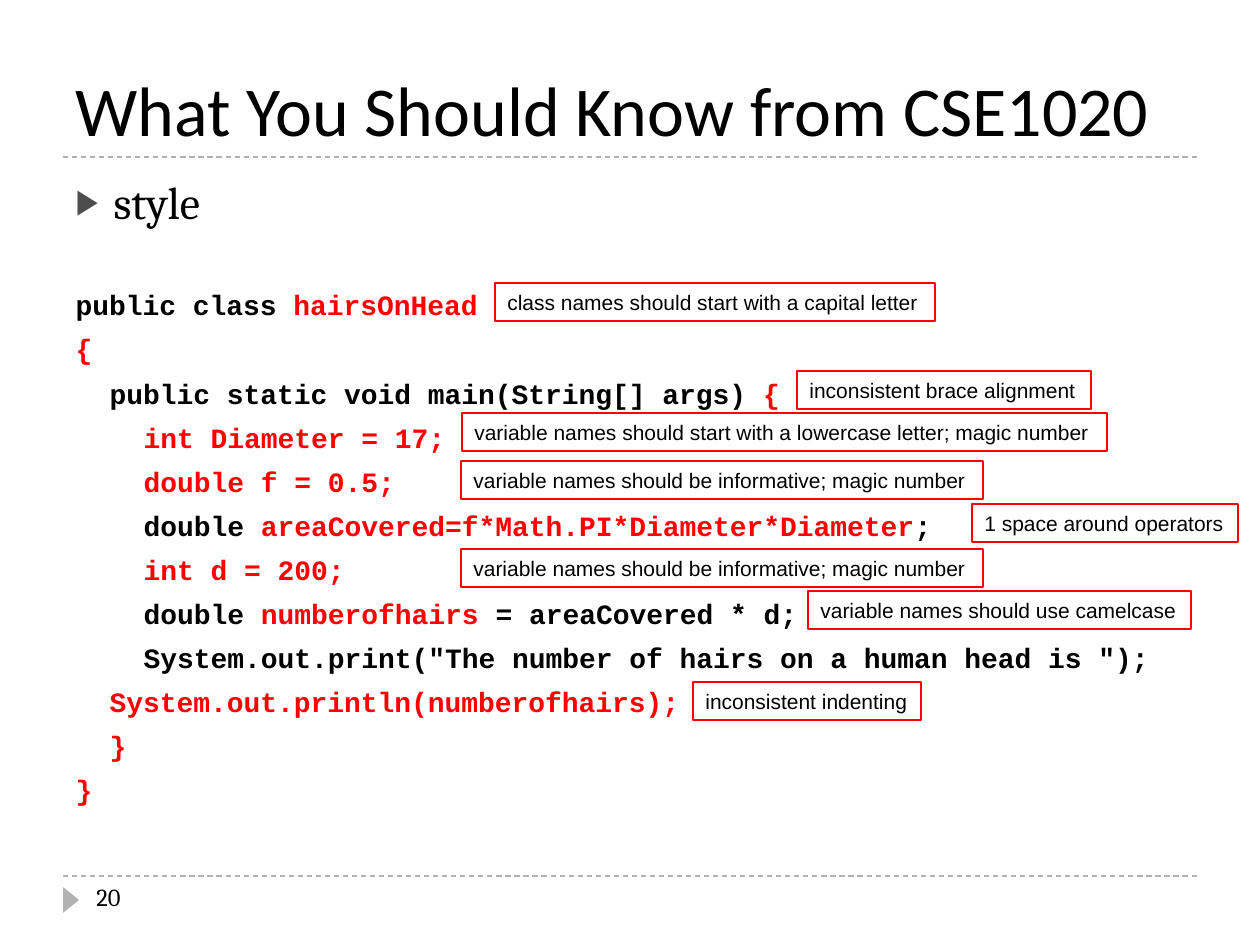
import pptx
import pptx.util
import pptx.dml.color
import pptx.enum.dml
import pptx.enum.shapes
import pptx.enum.text
import pptx.oxml
import pptx.oxml.ns

PX = 914400 / 126  # slide grid: 126 px to the inch
HUES = {"ink": "000000", "bad": "FF0000", "rule": "B2B2B2", "mark": "4D4D4D"}
FONTS = {
    "title": {"name": "Calibri", "size": pptx.util.Pt(40), "bold": False},
    "list": {"name": "Cambria", "size": pptx.util.Pt(26), "bold": False},
    "code": {"name": "Courier New", "size": pptx.util.Pt(16), "bold": True},
    "note": {"name": "Arial", "size": pptx.util.Pt(12), "bold": False},
    "page": {"name": "Cambria", "size": pptx.util.Pt(14), "bold": False},
}
STEP = 34  # two code characters

# Indent level and text; every second part between ~ marks is a style fault
CODE = [
    (0, "public class ~hairsOnHead"),
    (0, "~{"),
    (1, "public static void main(String[] args) ~{"),
    (2, "~int Diameter = 17;"),
    (2, "~double f = 0.5;"),
    (2, "double ~areaCovered=f*Math.PI*Diameter*Diameter~;"),
    (2, "~int d = 200;"),
    (2, "double ~numberofhairs~ = areaCovered * d;"),
    (2, 'System.out.print("The number of hairs on a human head is ");'),
    (1, "~System.out.println(numberofhairs);"),
    (1, "~}"),
    (0, "~}"),
]
VAGUE = "variable names should be informative; magic number"
# Left, top and width within the body box
NOTES = [
    (432, 115, 440, "class names should start with a capital letter"),
    (734, 203, 294, "inconsistent brace alignment"),
    (399, 245, 645, "variable names should start with a lowercase letter; magic number"),
    (398, 293, 522, VAGUE),
    (398, 381, 522, VAGUE),
    (745, 423, 383, "variable names should use camelcase"),
    (630, 514, 228, "inconsistent indenting"),
    (909, 336, 266, "1 space around operators"),
]


def emu(px):
    return pptx.util.Emu(round(px * PX))


def hue(name):
    return pptx.dml.color.RGBColor.from_string(HUES[name])


def apply(part, values):
    for key, value in values.items():
        setattr(part, key, value)


def place(shape, box):
    apply(shape, dict(zip(("left", "top", "width", "height"), map(emu, box))))


def write(para, text, style, tint="ink"):
    run = para.add_run()
    run.text = text
    apply(run.font, FONTS[style])
    run.font.color.rgb = hue(tint)


def indent(para, margin, first, bullet=None):
    props = para._p.get_or_add_pPr()
    props.set("marL", str(emu(margin)))
    props.set("indent", str(emu(first)))
    space = pptx.oxml.ns.nsdecls("a")
    if bullet:
        parts = [f'<a:buClr {space}><a:srgbClr val="{HUES["mark"]}"/></a:buClr>',
                 f'<a:buSzPct {space} val="76000"/>',
                 f'<a:buChar {space} char="{bullet}"/>']
    else:
        parts = [f"<a:buNone {space}/>"]
    for part in parts:
        props.append(pptx.oxml.parse_xml(part))


def rule(slide, left, top, width):
    line = slide.shapes.add_connector(
        pptx.enum.shapes.MSO_CONNECTOR.STRAIGHT,
        *map(emu, (left, top, left + width, top)))
    line.line.color.rgb = hue("rule")
    line.line.width = pptx.util.Pt(0.75)
    line.line.dash_style = pptx.enum.dml.MSO_LINE.DASH
    line._element.spPr.append(pptx.oxml.parse_xml(
        f"<a:effectLst {pptx.oxml.ns.nsdecls('a')}/>"))


def head(slide, box):
    left, top, width, height = box
    title = slide.shapes.title
    place(title, box)
    apply(title.text_frame, {
        "vertical_anchor": pptx.enum.text.MSO_ANCHOR.BOTTOM,
        "auto_size": pptx.enum.text.MSO_AUTO_SIZE.NONE, "word_wrap": True})
    para = title.text_frame.paragraphs[0]
    para.alignment = pptx.enum.text.PP_ALIGN.LEFT
    write(para, "What You Should Know from CSE1020", "title")
    rule(slide, left, top + height, width)


def body(slide, box):
    shape = slide.placeholders[1]
    place(shape, box)
    frame = shape.text_frame
    frame.auto_size = pptx.enum.text.MSO_AUTO_SIZE.NONE
    # Topic
    para = frame.paragraphs[0]
    para.space_before = pptx.util.Pt(6)
    indent(para, 38, -38, "▶")
    write(para, "style", "list")
    # Code, with a wide gap above its first line
    for row, (level, text) in enumerate(CODE):
        para = frame.add_paragraph()
        para.space_before = pptx.util.Pt(6 if row else 33.7)
        indent(para, STEP * level, 0)
        for spot, part in enumerate(text.split("~")):
            if part:
                write(para, part, "code", "bad" if spot % 2 else "ink")


def notes(slide, box):
    for left, top, width, text in NOTES:
        note = slide.shapes.add_shape(
            pptx.enum.shapes.MSO_SHAPE.RECTANGLE,
            *map(emu, (box[0] + left, box[1] + top, width, 38)))
        note.shadow.inherit = False
        note.fill.background()
        note.line.color.rgb = hue("bad")
        note.line.width = pptx.util.Pt(0.75)
        apply(note.text_frame, {
            "word_wrap": False,
            "vertical_anchor": pptx.enum.text.MSO_ANCHOR.TOP,
            "auto_size": pptx.enum.text.MSO_AUTO_SIZE.SHAPE_TO_FIT_TEXT})
        para = note.text_frame.paragraphs[0]
        para.alignment = pptx.enum.text.PP_ALIGN.LEFT
        write(para, text, "note")


def foot(slide, box):
    left, top, width, height = box
    rule(slide, left, top, width)
    # Page marker
    mark = slide.shapes.add_shape(
        pptx.enum.shapes.MSO_SHAPE.ISOSCELES_TRIANGLE,
        *map(emu, (left - 5, top + 16, 26, 16)))
    mark.rotation = 90
    mark.shadow.inherit = False
    mark.fill.solid()
    mark.fill.fore_color.rgb = hue("rule")
    mark.line.fill.background()
    # Page number
    page = slide.shapes.add_textbox(*map(emu, (left + 21, top, 273, height)))
    page.text_frame.word_wrap = True
    write(page.text_frame.paragraphs[0], "20", "page")


def main():
    deck = pptx.Presentation()
    apply(deck, {"slide_width": emu(1260), "slide_height": emu(945)})
    slide = deck.slides.add_slide(deck.slide_layouts[1])
    area = (63, 168, 1134, 680)
    head(slide, (63, 21, 1134, 136))
    body(slide, area)
    notes(slide, area)
    foot(slide, (63, 876, 1134, 50))
    deck.save("out.pptx")


if __name__ == "__main__":
    main()
